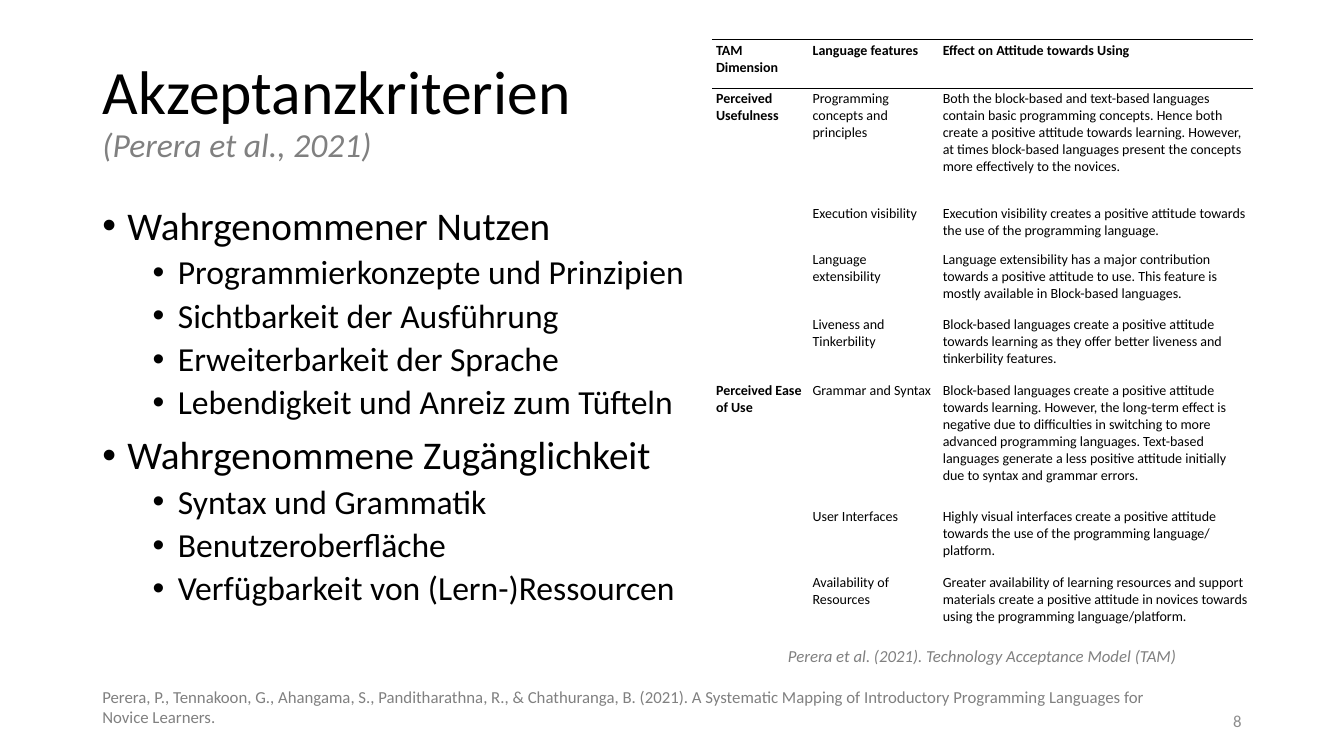
import pptx
import pptx.dml.color
import pptx.enum.text
import pptx.oxml
import pptx.oxml.ns
import pptx.util

PX = 9525
BLACK, GREY, PALE = "000000", "808080", "8C8C8C"
ANCHOR = pptx.enum.text.MSO_ANCHOR
ALIGN = pptx.enum.text.PP_ALIGN
AUTO = pptx.enum.text.MSO_AUTO_SIZE

CRITERIA = {
    "Wahrgenommener Nutzen": [
        "Programmierkonzepte und Prinzipien",
        "Sichtbarkeit der Ausführung",
        "Erweiterbarkeit der Sprache",
        "Lebendigkeit und Anreiz zum Tüfteln",
    ],
    "Wahrgenommene Zugänglichkeit": [
        "Syntax und Grammatik",
        "Benutzeroberfläche",
        "Verfügbarkeit von (Lern-)Ressourcen",
    ],
}
COLUMN_WIDTHS = [92, 124, 299]
ROW_HEIGHTS = [46, 110, 43, 62, 63, 120, 63, 62]
TAM_ROWS = [
    ("TAM Dimension", "Language features", "Effect on Attitude towards Using"),
    ("Perceived Usefulness", "Programming concepts and principles",
     "Both the block-based and text-based languages contain basic programming concepts. "
     "Hence both create a positive attitude towards learning. However, at times block-based "
     "languages present the concepts more effectively to the novices."),
    ("", "Execution visibility",
     "Execution visibility creates a positive attitude towards the use of the programming language."),
    ("", "Language extensibility",
     "Language extensibility has a major contribution towards a positive attitude to use. "
     "This feature is mostly available in Block-based languages."),
    ("", "Liveness and Tinkerbility",
     "Block-based languages create a positive attitude towards learning as they offer better "
     "liveness and tinkerbility features."),
    ("Perceived Ease of Use", "Grammar and Syntax",
     "Block-based languages create a positive attitude towards learning. However, the long-term "
     "effect is negative due to difficulties in switching to more advanced programming languages. "
     "Text-based languages generate a less positive attitude initially due to syntax and grammar errors."),
    ("", "User Interfaces",
     "Highly visual interfaces create a positive attitude towards the use of the programming "
     "language/ platform."),
    ("", "Availability of Resources",
     "Greater availability of learning resources and support materials create a positive attitude "
     "in novices towards using the programming language/platform."),
]


def px(length):
    return pptx.util.Emu(length * PX)


def color(value):
    return pptx.dml.color.RGBColor.from_string(value)


def assign(target, **values):
    for name, value in values.items():
        setattr(target, name, value)


def place(shape, box):
    names = ("left", "top", "width", "height")
    assign(shape, **dict(zip(names, map(px, box))))


def add_text(para, text, size, shade=BLACK, bold=False, italic=False):
    for index, line in enumerate(text.split("\n")):
        if index:
            para.add_line_break()
        span = para.add_run()
        span.text = line
        assign(span.font, name="Calibri", size=pptx.util.Pt(size), bold=bold, italic=italic)
        span.font.color.rgb = color(shade)


def add_title(page, box):
    title = page.shapes.title
    place(title, box)
    assign(title.text_frame, vertical_anchor=ANCHOR.MIDDLE, auto_size=AUTO.NONE, word_wrap=True)
    para = title.text_frame.paragraphs[0]
    assign(para, alignment=ALIGN.LEFT, line_spacing=0.9)
    add_text(para, "Akzeptanzkriterien", 44)
    para.add_line_break()
    add_text(para, "(Perera et al., 2021)", 24, GREY, italic=True)


def add_frame(page, box):
    frame = page.shapes.add_textbox(*map(px, box)).text_frame
    frame.word_wrap = True
    return frame


def add_bullet(para, text, level, before):
    properties = para._p.get_or_add_pPr()
    properties.set("marL", str(px(24 + 48 * level)))
    properties.set("indent", str(px(-24)))
    font = pptx.oxml.ns.qn("a:buFont")
    mark = pptx.oxml.ns.qn("a:buChar")
    properties.append(properties.makeelement(font, {"typeface": "Arial"}))
    properties.append(properties.makeelement(mark, {"char": "•"}))
    assign(para, level=level, line_spacing=0.9, space_before=pptx.util.Pt(before))
    add_text(para, text, 24 if level else 28)


def add_criteria(page, box):
    frame = add_frame(page, box)
    for index, (heading, points) in enumerate(CRITERIA.items()):
        para = frame.add_paragraph() if index else frame.paragraphs[0]
        add_bullet(para, heading, 0, 10 if index else 0)
        for point in points:
            add_bullet(frame.add_paragraph(), point, 1, 5)


def add_note(page, box, text, shade=GREY, italic=False, align=ALIGN.LEFT, anchor=ANCHOR.TOP):
    frame = add_frame(page, box)
    frame.vertical_anchor = anchor
    frame.paragraphs[0].alignment = align
    add_text(frame.paragraphs[0], text, 12, shade, italic=italic)


def add_borders(cell, ruled_edges):
    namespace = pptx.oxml.ns.nsdecls("a")
    for edge in ("lnL", "lnR", "lnT", "lnB"):
        paint = "<a:noFill/>"
        if edge in ruled_edges:
            paint = f'<a:solidFill><a:srgbClr val="{BLACK}"/></a:solidFill>'
        line = pptx.oxml.parse_xml(f'<a:{edge} {namespace} w="12700">{paint}</a:{edge}>')
        cell._tc.get_or_add_tcPr().append(line)


def add_tam_table(page, left, top):
    box = (left, top, sum(COLUMN_WIDTHS), sum(ROW_HEIGHTS))
    table = page.shapes.add_table(
        len(ROW_HEIGHTS), len(COLUMN_WIDTHS), *map(px, box)).table
    assign(table, first_row=False, horz_banding=False)
    for column, width in zip(table.columns, COLUMN_WIDTHS):
        column.width = px(width)
    for row, height in zip(table.rows, ROW_HEIGHTS):
        row.height = px(height)
    ruled_edges = {0: ("lnT", "lnB"), 1: ("lnT",)}
    for row_index, texts in enumerate(TAM_ROWS):
        for column_index, text in enumerate(texts):
            cell = table.cell(row_index, column_index)
            assign(cell, margin_left=px(4), margin_right=px(4),
                   margin_top=px(2), margin_bottom=px(2))
            add_borders(cell, ruled_edges.get(row_index, ()))
            cell.fill.background()
            if text:
                bold = row_index == 0 or column_index == 0
                add_text(cell.text_frame.paragraphs[0], text, 10, bold=bold)


def main():
    deck = pptx.Presentation()
    assign(deck, slide_width=px(1280), slide_height=px(720))
    page = deck.slides.add_slide(deck.slide_layouts.get_by_name("Title Only"))
    add_title(page, (88, 38, 1104, 139))
    add_criteria(page, (88, 192, 589, 457))
    add_note(page, (904, 667, 288, 38), "8", PALE, align=ALIGN.RIGHT, anchor=ANCHOR.MIDDLE)
    add_tam_table(page, 678, 38)
    add_note(page, (678, 610, 515, 38), "Perera et al. (2021). Technology Acceptance Model (TAM)",
             italic=True, align=ALIGN.CENTER)
    add_note(page, (88, 649, 1104, 68),
             "Perera, P., Tennakoon, G., Ahangama, S., Panditharathna, R., & Chathuranga, B. (2021). "
             "A Systematic Mapping of Introductory Programming Languages for\nNovice Learners.")
    deck.save("out.pptx")


if __name__ == "__main__":
    main()
